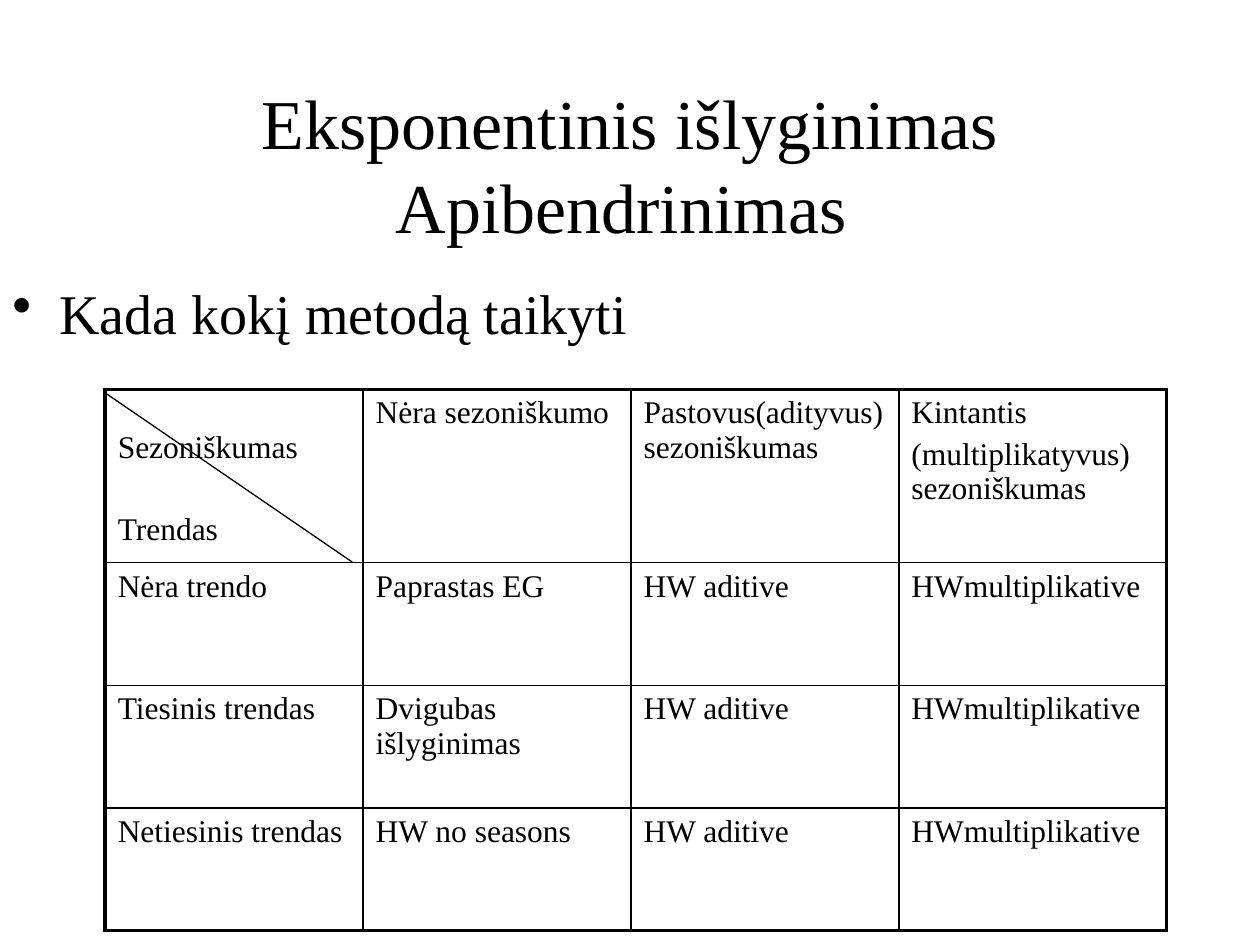
from dataclasses import dataclass

from lxml.etree import SubElement
from pptx import Presentation
from pptx.dml.color import RGBColor
from pptx.enum.shapes import MSO_CONNECTOR as Connector
from pptx.enum.text import MSO_ANCHOR as Anchor, MSO_AUTO_SIZE as AutoSize, PP_ALIGN as Align
from pptx.oxml.ns import qn
from pptx.util import Cm, Pt


@dataclass(frozen=True)
class Theme:
    font: str = "Times New Roman"
    ink: str = "000000"
    title_size: float = 40
    body_size: float = 32
    cell_size: float = 18
    paragraph_gap: float = 0.2
    outer_line: float = 2.25
    inner_line: float = 1
    diagonal_line: float = 0.75


class SlideBuilder:
    def __init__(self, slide, theme):
        self.slide = slide
        self.theme = theme

    def style(self, para, size, align=Align.LEFT, gap=0):
        para.alignment = align
        para.space_before = Pt(gap)
        para.font.name = self.theme.font
        para.font.size = Pt(size)
        para.font.color.rgb = RGBColor.from_string(self.theme.ink)

    def title(self, text, left, top, width, height):
        box = self.slide.shapes.title
        box.left, box.top, box.width, box.height = map(Cm, (left, top, width, height))
        frame = box.text_frame
        frame.text = text
        frame.word_wrap = True
        frame.auto_size = AutoSize.NONE
        frame.vertical_anchor = Anchor.MIDDLE
        self.style(frame.paragraphs[0], self.theme.title_size, Align.CENTER)

    def bullet(self, text, left, top, width, height, indent):
        box = self.slide.shapes.add_textbox(*map(Cm, (left, top, width, height)))
        frame = box.text_frame
        frame.word_wrap = True
        para = frame.paragraphs[0]
        para.text = text
        size = self.theme.body_size
        self.style(para, size, gap=size * self.theme.paragraph_gap)
        properties = para._p.get_or_add_pPr()
        properties.set("marL", str(Cm(indent)))
        properties.set("indent", str(-Cm(indent)))
        mark = properties.makeelement(qn("a:buChar"), {"char": "•"})
        properties.find(qn("a:defRPr")).addprevious(mark)

    def table(self, rows, left, top, widths, heights, wide_gaps):
        """Draw rows of cell texts; wide_gaps maps a text to its space before in points."""
        size = (sum(widths), sum(heights))
        frame = self.slide.shapes.add_table(
            len(heights), len(widths), *map(Cm, (left, top, *size)))
        table = frame.table
        table.first_row = table.horz_banding = False
        for column, width in zip(table.columns, widths):
            column.width = Cm(width)
        for row, height in zip(table.rows, heights):
            row.height = Cm(height)
        last_row, last_column = len(heights) - 1, len(widths) - 1
        for r, texts in enumerate(rows):
            for c, text in enumerate(texts):
                cell = table.cell(r, c)
                self.fill_cell(cell, text, wide_gaps)
                self.borders(cell, {"a:lnL": c == 0, "a:lnR": c == last_column,
                                    "a:lnT": r == 0, "a:lnB": r == last_row})

    def fill_cell(self, cell, text, wide_gaps):
        cell.fill.background()
        cell.text = text
        size = self.theme.cell_size
        for index, para in enumerate(cell.text_frame.paragraphs):
            gap = size * self.theme.paragraph_gap if index else 0
            self.style(para, size, gap=wide_gaps.get(para.text, gap))

    def borders(self, cell, sides):
        """Line each side of a cell; a true value marks the outer edge of the table."""
        properties = cell._tc.get_or_add_tcPr()
        for index, (tag, is_outer) in enumerate(sides.items()):
            width = self.theme.outer_line if is_outer else self.theme.inner_line
            line = properties.makeelement(qn(tag), {"w": str(Pt(width))})
            fill = SubElement(line, qn("a:solidFill"))
            SubElement(fill, qn("a:srgbClr"), val=self.theme.ink)
            properties.insert(index, line)

    def line(self, left, top, right, bottom):
        line = self.slide.shapes.add_connector(
            Connector.STRAIGHT, *map(Cm, (left, top, right, bottom)))
        line.line.color.rgb = RGBColor.from_string(self.theme.ink)
        line.line.width = Pt(self.theme.diagonal_line)
        SubElement(line._element.spPr, qn("a:effectLst"))


METHODS = [
    ["\vSezoniškumas\nTrendas", "Nėra sezoniškumo", "Pastovus(adityvus)sezoniškumas",
     "Kintantis\n(multiplikatyvus) sezoniškumas"],
    *([trend, method, "HW aditive", "HWmultiplikative"] for trend, method in (
        ("Nėra trendo", "Paprastas EG"),
        ("Tiesinis trendas", "Dvigubas išlyginimas"),
        ("Netiesinis trendas", "HW no seasons"))),
]


def main():
    deck = Presentation()
    deck.slide_width, deck.slide_height = Cm(25.4), Cm(19.05)
    title_only = deck.slide_layouts[5]
    page = SlideBuilder(deck.slides.add_slide(title_only), Theme())
    page.title("Eksponentinis išlyginimas\vApibendrinimas ", 1.9, 1.7, 21.6, 3.18)
    page.bullet("Kada kokį metodą taikyti", 0, 5.5, 21.6, 11.43, indent=0.95)
    page.table(METHODS, 2.12, 7.85, widths=[5.2] + [5.4] * 3,
               heights=[3.3] + [2.47] * 3, wide_gaps={"Trendas": 27})
    page.line(2.12, 7.92, 7.1, 11.33)
    deck.save("out.pptx")


if __name__ == "__main__":
    main()
